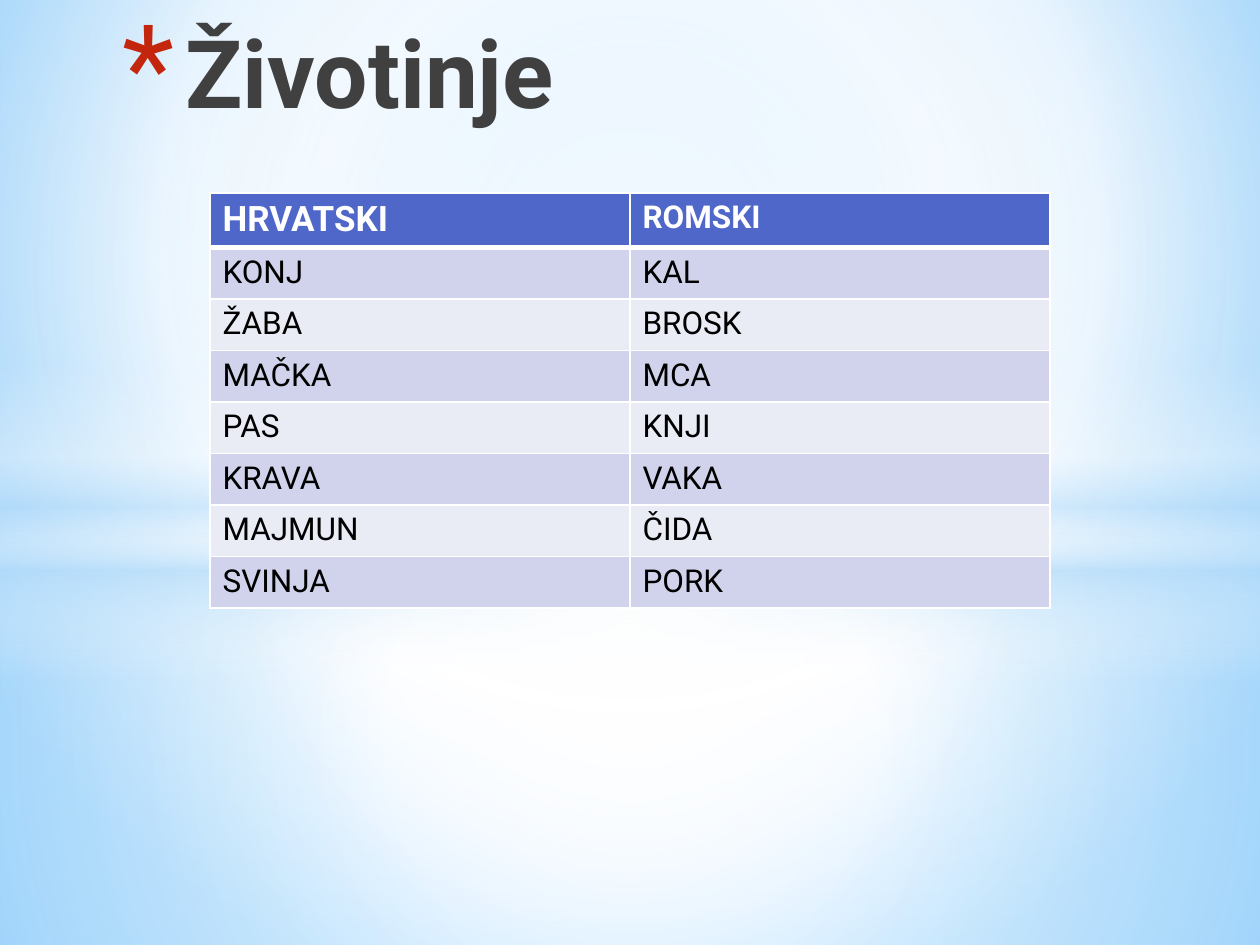
import pptx
import pptx.dml.color
import pptx.enum.shapes
import pptx.enum.text
import pptx.oxml
import pptx.oxml.ns
import pptx.util
from lxml import etree

FONT = "Roboto"
WHITE = "FFFFFF"
SKY = "B4DCFA"
CENTER = (50, 50, 50, 50)
WORDS = [
    ("HRVATSKI", "ROMSKI"),
    ("KONJ", "KAL"),
    ("ŽABA", "BROSK"),
    ("MAČKA", "MCA"),
    ("PAS", "KNJI"),
    ("KRAVA", "VAKA"),
    ("MAJMUN", "ČIDA"),
    ("SVINJA", "PORK"),
]


def px(n):
    return pptx.util.Emu(n * 914400 // 126)


def rgb(value):
    return pptx.dml.color.RGBColor.from_string(value)


def add_xml(parent, tag, **attrs):
    el = etree.SubElement(parent, pptx.oxml.ns.qn(tag))
    for name, value in attrs.items():
        el.set(name, str(value))
    return el


def set_gradient(fill, owner, stops, focus=None):
    """Stops are (percent, colour, opacity percent); focus is l, t, r, b."""
    fill.gradient()
    grad = next(owner.iter(pptx.oxml.ns.qn("a:gradFill")))
    for child in list(grad):
        grad.remove(child)
    stop_list = add_xml(grad, "a:gsLst")
    for position, color, opacity in stops:
        stop = add_xml(stop_list, "a:gs", pos=position * 1000)
        clr = add_xml(stop, "a:srgbClr", val=color)
        if opacity < 100:
            add_xml(clr, "a:alpha", val=opacity * 1000)
    if focus:
        circle = add_xml(grad, "a:path", path="circle")
        sides = {side: v * 1000 for side, v in zip("ltrb", focus)}
        add_xml(circle, "a:fillToRect", **sides)
    else:
        add_xml(grad, "a:lin", ang=90 * 60000, scaled=0)


def add_glow(slide, kind, top, height, stops, focus=None):
    sp = slide.shapes.add_shape(kind, 0, px(top), px(1260), px(height))
    sp.shadow.inherit = False
    sp.line.fill.background()
    set_gradient(sp.fill, sp.element.spPr, stops, focus)


def add_background(slide):
    set_gradient(slide.background.fill, slide.element,
                 [(0, "9ED5FF", 100), (60, WHITE, 100), (100, "5BB9FF", 100)],
                 (20, 10, 20, 60))
    shape = pptx.enum.shapes.MSO_SHAPE
    # Lower and upper halves
    add_glow(slide, shape.RECTANGLE, 533, 412,
             [(0, WHITE, 91), (37, WHITE, 76), (100, SKY, 79)], CENTER)
    add_glow(slide, shape.RECTANGLE, 0, 533,
             [(0, WHITE, 89), (48, WHITE, 62), (100, SKY, 79)], CENTER)
    # Horizon band and central light
    add_glow(slide, shape.RECTANGLE, 365, 315,
             [(0, WHITE, 0), (29, WHITE, 30), (45, SKY, 40),
              (55, WHITE, 26), (65, SKY, 60), (100, WHITE, 0)])
    add_glow(slide, shape.OVAL, 221, 703,
             [(0, WHITE, 100), (54, WHITE, 0)], CENTER)


def style_text(p, size, color, bold):
    p.font.name = FONT
    p.font.size = pptx.util.Pt(size)
    p.font.bold = bold
    p.font.color.rgb = rgb(color)


def add_title(slide, text):
    box = slide.shapes.add_textbox(px(85), px(1), px(1071), px(203))
    tf = box.text_frame
    tf.word_wrap = True
    tf.margin_top = px(13)
    p = tf.paragraphs[0]
    p.text = text
    # Hanging asterisk bullet
    props = p._p.get_or_add_pPr()
    props.set("marL", str(px(88)))
    props.set("indent", str(-px(63)))
    add_xml(add_xml(props, "a:buClr"), "a:srgbClr", val="C3260C")
    add_xml(props, "a:buSzPct", val=128000)
    add_xml(props, "a:buFont", typeface=FONT)
    add_xml(props, "a:buChar", char="*")
    style_text(p, 54, "404040", True)


def set_borders(cell, top, bottom):
    props = cell._tc.get_or_add_tcPr()
    for side, width in (("L", 1), ("R", 1), ("T", top), ("B", bottom)):
        line = add_xml(props, "a:ln" + side, w=pptx.util.Pt(width))
        add_xml(add_xml(line, "a:solidFill"), "a:srgbClr", val=WHITE)


def add_word_table(slide, rows):
    frame = slide.shapes.add_table(len(rows), 2, px(210), px(193),
                                   px(840), px(412))
    table = frame.table
    table.first_row = table.horz_banding = False
    for i, words in enumerate(rows):
        header = i == 0
        for j, word in enumerate(words):
            cell = table.cell(i, j)
            cell.text = word
            style_text(cell.text_frame.paragraphs[0],
                       20 if header and j == 0 else 18,
                       WHITE if header else "000000", header)
            set_borders(cell, 3 if i == 1 else 1, 3 if header else 1)
            cell.fill.solid()
            band = "D0D3EB" if i % 2 else "E9EBF5"
            cell.fill.fore_color.rgb = rgb("4E67C8" if header else band)


def main():
    prs = pptx.Presentation()
    prs.slide_width, prs.slide_height = px(1260), px(945)
    slide = prs.slides.add_slide(prs.slide_layouts[6])
    add_background(slide)
    add_title(slide, "Životinje")
    add_word_table(slide, WORDS)
    prs.save("out.pptx")


if __name__ == "__main__":
    main()
